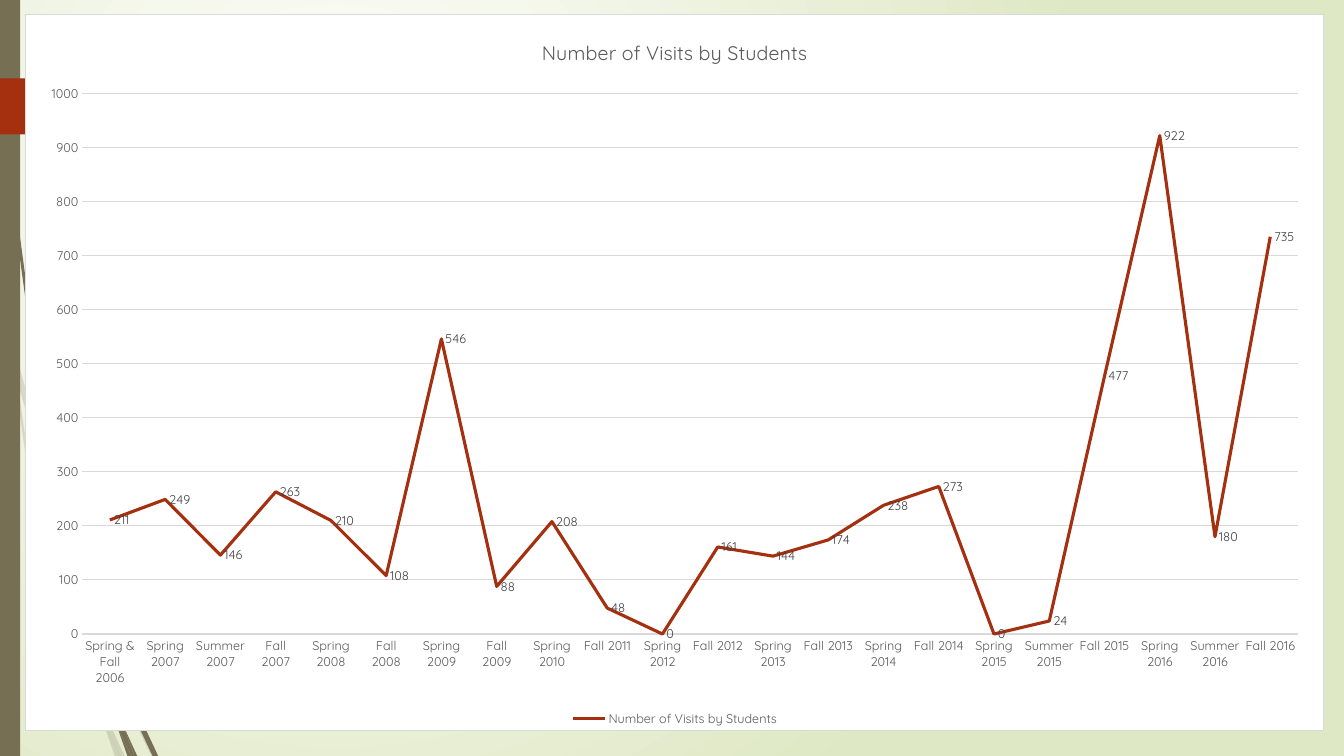
import lxml.etree
import pptx
import pptx.chart.data
import pptx.dml.color
import pptx.enum.chart
import pptx.enum.shapes
import pptx.oxml
import pptx.oxml.ns
import pptx.util

Pt = pptx.util.Pt
RGBColor = pptx.dml.color.RGBColor
qn = pptx.oxml.ns.qn

WHITE = RGBColor(0xFF, 0xFF, 0xFF)
LIME = RGBColor(0xDF, 0xE8, 0xC4)
OLIVE = RGBColor(0x76, 0x6F, 0x54)
RUST = RGBColor(0xA5, 0x30, 0x10)
SILVER = RGBColor(0xD9, 0xD9, 0xD9)
GREY = RGBColor(0x59, 0x59, 0x59)
DARK = RGBColor(0x40, 0x40, 0x40)
BLACK = RGBColor(0, 0, 0)

FACE = "Quicksand"
TITLE = "Number of Visits by Students"
VISITS = {
    "Spring & Fall 2006": 211, "Spring 2007": 249, "Summer 2007": 146,
    "Fall 2007": 263, "Spring 2008": 210, "Fall 2008": 108,
    "Spring 2009": 546, "Fall 2009": 88, "Spring 2010": 208,
    "Fall 2011": 48, "Spring 2012": 0, "Fall 2012": 161,
    "Spring 2013": 144, "Fall 2013": 174, "Spring 2014": 238,
    "Fall 2014": 273, "Spring 2015": 0, "Summer 2015": 24,
    "Fall 2015": 477, "Spring 2016": 922, "Summer 2016": 180,
    "Fall 2016": 735,
}

PALE_REEDS = [
    [(42, 376), (60, 431), (61, 422), (45, 374), (10, 248), (12, 271)],
    [(66, 437), (63, 429), (63, 439), (89, 500), (108, 540), (112, 540), (91, 498)],
    [(86, 540), (89, 540), (76, 512)],
    [(67, 492), (50, 446), (22, 338), (12, 271), (8, 252), (20, 338), (47, 447),
     (66, 499), (73, 514), (71, 509)],
    [(73, 514), (82, 540), (86, 540)],
    [(69, 498), (67, 492), (71, 509), (73, 514), (86, 540), (76, 512)],
]
DARK_REEDS = [
    [(5, 79), (12, 168), (24, 256), (40, 343), (41, 346), (40, 329), (26, 256),
     (14, 167), (6, 78), (4, 35), (3, 0), (2, 0), (3, 35)],
    [(81, 467), (79, 462), (80, 472), (95, 510), (109, 540), (113, 540), (98, 508)],
    [(96, 540), (98, 540), (88, 518)],
    [(84, 520), (91, 540), (94, 540)],
    [(84, 508), (79, 498), (84, 516), (84, 520), (94, 540), (96, 540), (88, 518)],
]
TAB = [(0, 56.2), (105, 56.2), (107, 57), (125, 75), (125, 78), (107, 95.5),
       (105, 96.4), (0, 96.4)]


def put(item, **form):
    for name, value in form.items():
        setattr(item, name, value)


def set_font(font, size, color):
    put(font, name=FACE, size=Pt(size), bold=False)
    font.color.rgb = color


def set_line(line, width, color):
    line.width = Pt(width)
    line.color.rgb = color


def paint(shape, color):
    shape.fill.solid()
    shape.fill.fore_color.rgb = color
    shape.line.fill.background()
    shape.shadow.inherit = False


def add_form(slide, points, color, alpha=None):
    pen = slide.shapes.build_freeform(*points[0], scale=Pt(1))
    pen.add_line_segments(points[1:], close=True)
    shape = pen.convert_to_shape()
    paint(shape, color)
    if alpha:
        tone = shape.fill._xPr.find(".//" + qn("a:srgbClr"))
        lxml.etree.SubElement(tone, qn("a:alpha"), val=str(alpha * 1000))


def add_glow(slide):
    fill = slide.background.fill
    fill.gradient()
    for stop, color in zip(fill.gradient_stops, (WHITE, LIME)):
        stop.color.rgb = color
    grad = slide._element.find(".//" + qn("a:gradFill"))
    grad.remove(grad.find(qn("a:lin")))
    ring = lxml.etree.SubElement(grad, qn("a:path"), path="circle")
    lxml.etree.SubElement(ring, qn("a:fillToRect"),
                          l="50000", t="50000", r="100000", b="100000")


def set_frame(chart):
    space = chart._chartSpace
    if space.find(qn("c:roundedCorners")) is None:
        edge = lxml.etree.Element(qn("c:roundedCorners"), val="0")
        space.find(qn("c:date1904")).addnext(edge)
    frame = pptx.oxml.parse_xml(
        f'<c:spPr {pptx.oxml.ns.nsdecls("c", "a")}>'
        f'<a:solidFill><a:srgbClr val="{WHITE}"/></a:solidFill>'
        f'<a:ln w="{Pt(0.75)}"><a:solidFill><a:srgbClr val="{SILVER}"/>'
        '</a:solidFill></a:ln></c:spPr>')
    space.find(qn("c:chart")).addnext(frame)


def set_axes(chart):
    none = pptx.enum.chart.XL_TICK_MARK.NONE
    for axis in (chart.category_axis, chart.value_axis):
        put(axis, major_tick_mark=none, minor_tick_mark=none)
        set_font(axis.tick_labels.font, 9, GREY)
    set_line(chart.category_axis.format.line, 0.75, SILVER)
    scale = chart.value_axis
    put(scale, minimum_scale=0, maximum_scale=1000, major_unit=100,
        has_major_gridlines=True)
    scale.format.line.fill.background()
    set_line(scale.major_gridlines.format.line, 0.75, SILVER)


def set_series(plot):
    plot.vary_by_categories = False
    series = plot.series[0]
    series.smooth = False
    series.marker.style = pptx.enum.chart.XL_MARKER_STYLE.NONE
    set_line(series.format.line, 2.25, RUST)
    labels = series.data_labels
    put(labels, show_value=True,
        position=pptx.enum.chart.XL_LABEL_POSITION.RIGHT)
    set_font(labels.font, 9, DARK)


def add_graph(slide):
    data = pptx.chart.data.CategoryChartData()
    data.categories = list(VISITS)
    data.add_series(TITLE, list(VISITS.values()))
    chart = slide.shapes.add_chart(
        pptx.enum.chart.XL_CHART_TYPE.LINE,
        Pt(18), Pt(10.2), Pt(928), Pt(512), data).chart
    put(chart, has_title=True, has_legend=True)
    set_font(chart.font, 10, BLACK)
    head = chart.chart_title.text_frame
    head.text = TITLE
    set_font(head.paragraphs[0].runs[0].font, 14, GREY)
    chart.chart_title.include_in_layout = False
    put(chart.legend, include_in_layout=False,
        position=pptx.enum.chart.XL_LEGEND_POSITION.BOTTOM)
    set_font(chart.legend.font, 9, GREY)
    set_axes(chart)
    set_series(chart.plots[0])
    set_frame(chart)


def main():
    deck = pptx.Presentation()
    put(deck, slide_width=Pt(960), slide_height=Pt(540))
    slide = deck.slides.add_slide(deck.slide_layouts[6])
    add_glow(slide)
    for reed in PALE_REEDS:
        add_form(slide, reed, OLIVE, 20)
    for reed in DARK_REEDS:
        add_form(slide, reed, OLIVE)
    bar = slide.shapes.add_shape(pptx.enum.shapes.MSO_SHAPE.RECTANGLE,
                                 0, 0, Pt(14.4), Pt(540))
    paint(bar, OLIVE)
    add_form(slide, TAB, RUST)
    add_graph(slide)
    deck.save("out.pptx")


if __name__ == "__main__":
    main()
